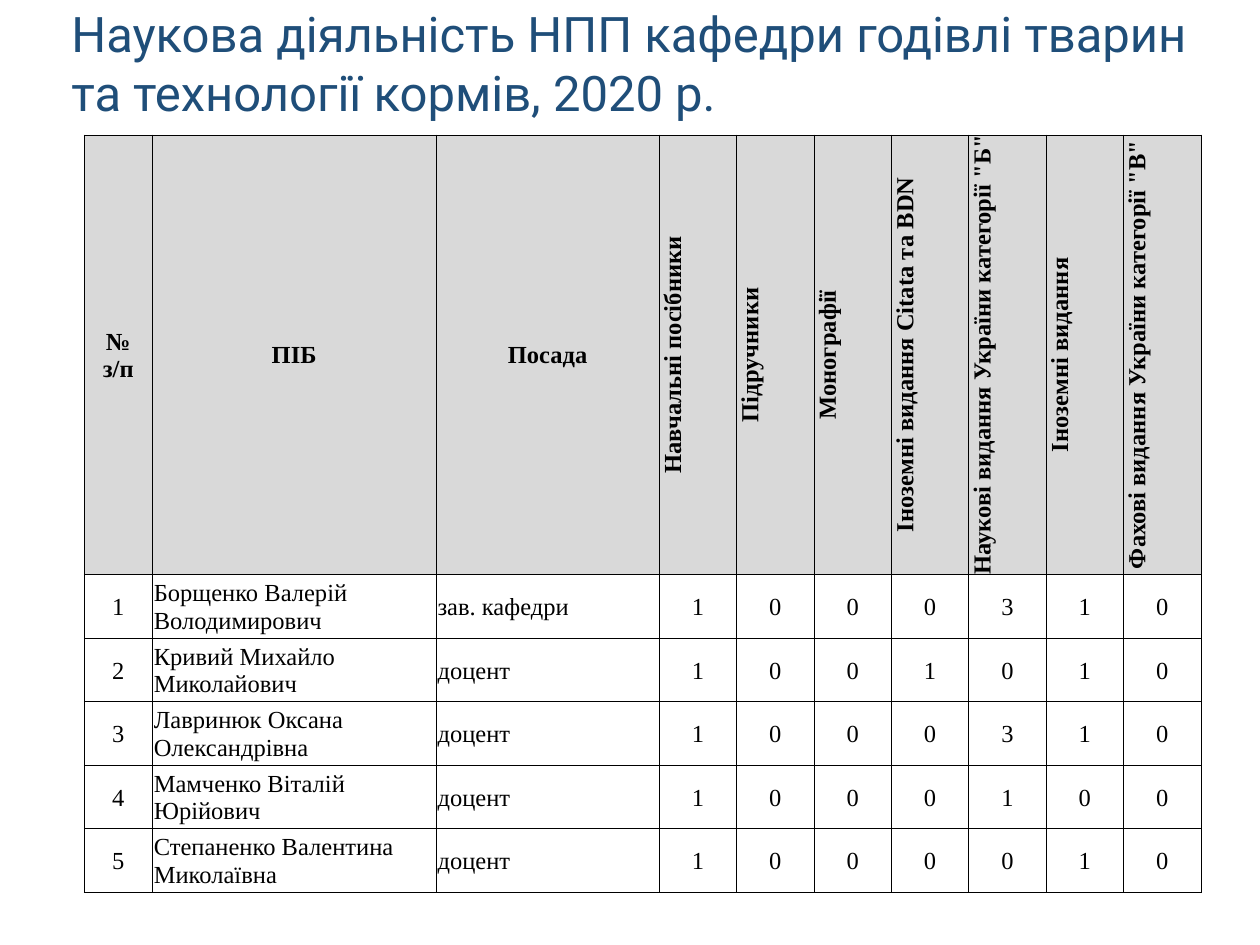
from lxml import etree
from pptx import Presentation
from pptx.dml.color import RGBColor
from pptx.enum import text as t
from pptx.oxml import ns
from pptx.util import Cm, Pt

TITLE_BLUE = RGBColor(0x1F, 0x4E, 0x79)
HEADER_GREY = RGBColor(0xD9, 0xD9, 0xD9)
BLACK = RGBColor(0, 0, 0)
WHITE = RGBColor(0xFF, 0xFF, 0xFF)

TITLE = "Наукова діяльність НПП кафедри годівлі тварин та технології кормів, 2020 р."
STAFF_HEADERS = ["№\nз/п", "ПІБ", "Посада"]
PUBLICATION_HEADERS = [
    "Навчальні посібники",
    "Підручники",
    "Монографії",
    "Іноземні видання Citata та BDN",
    'Наукові видання України категорії "Б"',
    "Іноземні видання",
    'Фахові видання України категорії "В"',
]
STAFF = [
    ("Борщенко Валерій Володимирович", "зав. кафедри", [1, 0, 0, 0, 3, 1, 0]),
    ("Кривий Михайло Миколайович", "доцент", [1, 0, 0, 1, 0, 1, 0]),
    ("Лавринюк Оксана Олександрівна", "доцент", [1, 0, 0, 0, 3, 1, 0]),
    ("Мамченко Віталій Юрійович", "доцент", [1, 0, 0, 0, 1, 0, 0]),
    ("Степаненко Валентина Миколаївна", "доцент", [1, 0, 0, 0, 0, 1, 0]),
]
COLUMN_WIDTHS = [1.37, 5.72, 4.5] + [1.56] * len(PUBLICATION_HEADERS)
ROW_HEIGHTS = [7.01] + [1.28] * len(STAFF)
TEXT_COLUMNS = (1, 2)


def apply(target, values):
    for name, value in values.items():
        setattr(target, name, value)


def style_text(frame, align, color, **font):
    for paragraph in frame.paragraphs:
        paragraph.alignment = align
        apply(paragraph.font, font)
        paragraph.font.color.rgb = color


def add_borders(cell):
    properties = cell._tc.get_or_add_tcPr()
    for side in ("a:lnL", "a:lnR", "a:lnT", "a:lnB"):
        line = etree.SubElement(properties, ns.qn(side), w=str(Pt(0.5)))
        fill = etree.SubElement(line, ns.qn("a:solidFill"))
        etree.SubElement(fill, ns.qn("a:srgbClr"), val=str(BLACK))


def add_title(slide, left, top, width, height):
    title = slide.shapes.add_textbox(Cm(left), Cm(top), Cm(width), Cm(height))
    frame = title.text_frame
    apply(frame, {"word_wrap": True, "vertical_anchor": t.MSO_ANCHOR.MIDDLE,
                  "text": TITLE})
    style_text(frame, t.PP_ALIGN.LEFT, TITLE_BLUE, name="Roboto", size=Pt(28))


def fill_cell(cell, content, is_header, align, margin):
    apply(cell, {
        "text": str(content),
        "vertical_anchor": t.MSO_ANCHOR.MIDDLE,
        "margin_left": Cm(margin),
        "margin_right": Cm(margin),
        "margin_top": Cm(margin),
        "margin_bottom": 0,
    })
    style_text(cell.text_frame, align, BLACK,
               name="Times New Roman", size=Pt(14), bold=is_header)
    add_borders(cell)
    cell.fill.solid()
    cell.fill.fore_color.rgb = HEADER_GREY if is_header else WHITE


def add_publications_table(slide, left, top):
    rows = [STAFF_HEADERS + PUBLICATION_HEADERS]
    rows += [[number, name, post, *counts]
             for number, (name, post, counts) in enumerate(STAFF, 1)]
    table = slide.shapes.add_table(
        len(rows), len(COLUMN_WIDTHS), Cm(left), Cm(top),
        Cm(sum(COLUMN_WIDTHS)), Cm(sum(ROW_HEIGHTS))).table
    apply(table, {"first_row": False, "horz_banding": False})
    for column, width in zip(table.columns, COLUMN_WIDTHS):
        column.width = Cm(width)
    for row, height in zip(table.rows, ROW_HEIGHTS):
        row.height = Cm(height)

    for r, contents in enumerate(rows):
        is_header = r == 0
        for c, content in enumerate(contents):
            is_left = not is_header and c in TEXT_COLUMNS
            align = t.PP_ALIGN.LEFT if is_left else t.PP_ALIGN.CENTER
            margin = 0 if is_header and c > 0 else 0.03
            fill_cell(table.cell(r, c), content, is_header, align, margin)

    # Publication headings read from bottom to top
    for c in range(len(STAFF_HEADERS), len(COLUMN_WIDTHS)):
        table.cell(0, c)._tc.get_or_add_tcPr().set("vert", "vert270")


def main():
    deck = Presentation()
    apply(deck, {"slide_width": Cm(25.4), "slide_height": Cm(19.05)})
    slide = deck.slides.add_slide(deck.slide_layouts[6])
    add_title(slide, 1.19, 0, 23.01, 2.51)
    add_publications_table(slide, 1.7, 2.72)
    deck.save("out.pptx")


if __name__ == "__main__":
    main()
